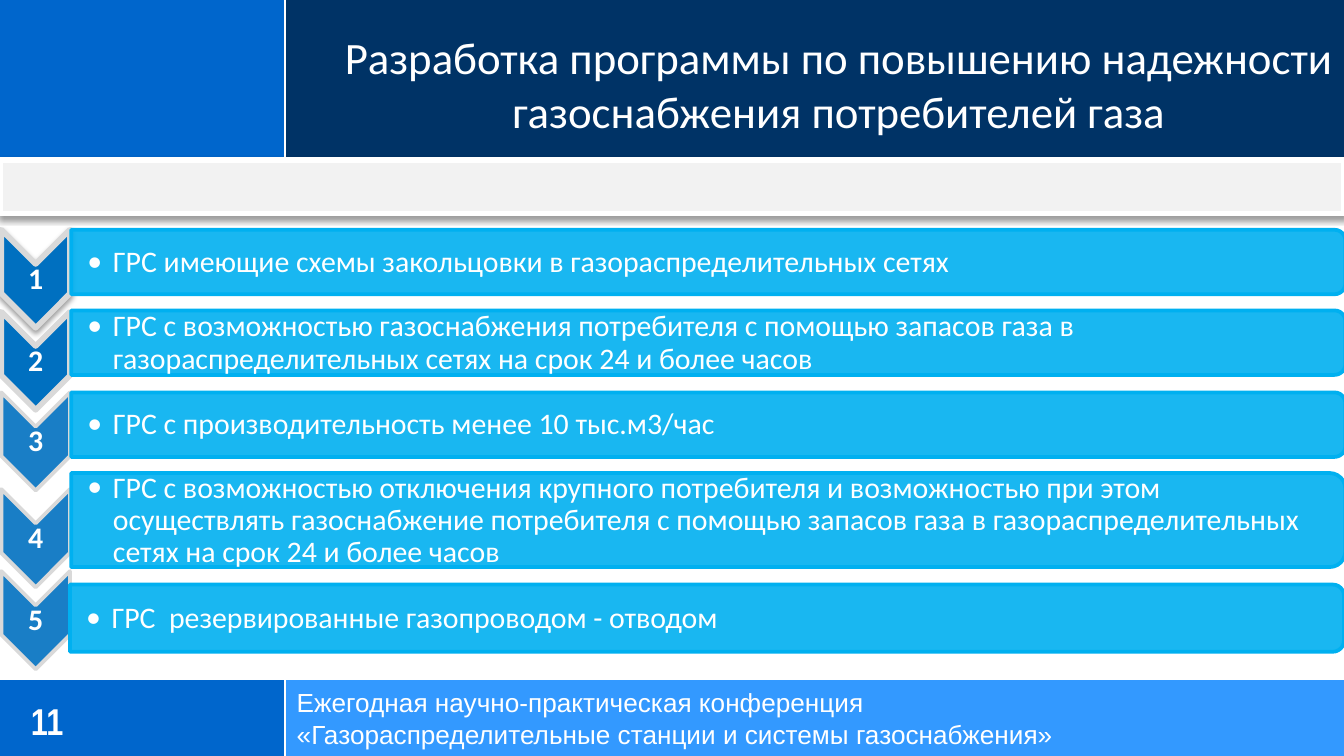
"""Build the slide on the gas supply reliability programme."""
from lxml import etree
from pptx import Presentation
from pptx import util as u
from pptx.dml.color import RGBColor
from pptx.enum import shapes as kinds, text as txt
from pptx.oxml.ns import qn

NAVY = RGBColor(0x00, 0x33, 0x66)
BLUE = RGBColor(0x00, 0x66, 0xCC)
LIGHT = RGBColor(0x33, 0x99, 0xFF)
ARROW = RGBColor(0x00, 0x70, 0xC0)
CYAN = RGBColor(0x00, 0xB0, 0xF0)
GREY = RGBColor(0xD9, 0xD9, 0xD9)
PALE = RGBColor(0xF2, 0xF2, 0xF2)
WHITE = RGBColor(0xFF, 0xFF, 0xFF)

TITLE = "Разработка программы по повышению надежности газоснабжения потребителей газа"
FOOTER = ("Ежегодная научно-практическая конференция\n"
          "«Газораспределительные станции и системы газоснабжения»")
NUMBER = "11"
PANELS = [
    (0, 5.06, 2.12, 0.59, BLUE),
    (2.12, 5.06, 7.88, 0.59, LIGHT),
    (2.12, 0, 7.88, 1.18, NAVY),
    (0, 0, 2.12, 1.18, BLUE),
]
RULES = [
    (2.12, 5.06, 2.12, 5.65),
    (2.12, 0, 2.12, 1.18),
    (0, 5.05, 10, 5.05),
    (0, 1.18, 10, 1.18),
]
# text, bar left, bar top, bar height, arrow top
ITEMS = [
    ("ГРС имеющие схемы закольцовки в газораспределительных сетях", 0.53, 1.71, 0.48, 1.71),
    ("ГРС с возможностью газоснабжения потребителя с помощью запасов газа в "
     "газораспределительных сетях на срок 24 и более часов", 0.53, 2.31, 0.48, 2.32),
    ("ГРС с производительность менее 10 тыс.м3/час", 0.53, 2.92, 0.48, 2.92),
    ("ГРС с возможностью отключения крупного потребителя и возможностью при этом "
     "осуществлять газоснабжение потребителя с помощью запасов газа в "
     "газораспределительных сетях на срок 24 и более часов", 0.53, 3.52, 0.7, 3.64),
    ("ГРС  резервированные газопроводом - отводом", 0.52, 4.35, 0.5, 4.25),
]

deck = Presentation()
deck.slide_width = u.Inches(10)
deck.slide_height = deck.slide_width * 9 // 16
slide = deck.slides.add_slide(deck.slide_layouts[5])


def shape(kind, left, top, wide, high, fill, line=None, width=0, alpha=100, turn=False):
    if turn:
        left, top = left + (wide - high) / 2, top + (high - wide) / 2
        wide, high = high, wide
    item = slide.shapes.add_shape(kind, *map(u.Inches, (left, top, wide, high)))
    item.rotation = 90 if turn else 0
    item.shadow.inherit = False
    item.fill.solid()
    item.fill.fore_color.rgb = fill
    if alpha < 100:
        color = item._element.spPr.find(qn("a:solidFill"))[0]
        etree.SubElement(color, qn("a:alpha"), val=str(alpha * 1000))
    if line is None:
        item.line.fill.background()
    else:
        item.line.color.rgb = line
        item.line.width = u.Pt(width)
    return item


def shade(item):
    effect = item._element.spPr.find(qn("a:effectLst"))
    outer = etree.SubElement(effect, qn("a:outerShdw"), blurRad=str(u.Pt(3.1)),
                             dist=str(u.Pt(1.6)), dir="5400000", rotWithShape="0")
    color = etree.SubElement(outer, qn("a:srgbClr"), val="000000")
    etree.SubElement(color, qn("a:alpha"), val="38000")


def style(frame, size, font, bold=False, align=None, space=None):
    for para in frame.paragraphs:
        para.alignment = align
        para.line_spacing = space
        for run in para.runs:
            run.font.size, run.font.name, run.font.bold = u.Pt(size), font, bold
            run.font.color.rgb = WHITE


def label(words, left, top, wide, high, pads=None):
    box = slide.shapes.add_textbox(*map(u.Inches, (left, top, wide, high)))
    frame = box.text_frame
    frame.word_wrap = True
    frame.text = words
    if pads:
        frame.vertical_anchor = txt.MSO_ANCHOR.MIDDLE
        (frame.margin_left, frame.margin_top,
         frame.margin_right, frame.margin_bottom) = map(u.Inches, pads)
    return frame


def bullet(para):
    props = para._p.get_or_add_pPr()
    props.set("marL", str(u.Inches(0.19)))
    props.set("indent", str(u.Inches(-0.19)))
    etree.SubElement(props, qn("a:buFont"), typeface="Calibri")
    etree.SubElement(props, qn("a:buChar"), char="•")


for *place, fill in PANELS:
    shape(kinds.MSO_SHAPE.RECTANGLE, *place, fill)
for ends in RULES:
    rule = slide.shapes.add_connector(kinds.MSO_CONNECTOR.STRAIGHT, *map(u.Inches, ends))
    rule.line.color.rgb = WHITE
    rule.line.width = u.Pt(1.25)
    etree.SubElement(rule._element.spPr, qn("a:effectLst"))

title = slide.shapes.title
slide.shapes._spTree.append(title._element)
title.left, title.top, title.width, title.height = map(u.Inches, (2.32, 0.17, 7.84, 0.91))
title.text_frame.text = TITLE
title.text_frame.auto_size = txt.MSO_AUTO_SIZE.NONE
title.text_frame.vertical_anchor = txt.MSO_ANCHOR.TOP
style(title.text_frame, 24, "Calibri", align=txt.PP_ALIGN.CENTER)

style(label(NUMBER, 0.23, 5.1, 1.62, 0.52, (0, 0, 0, 0)), 20, "Arial Narrow", True)
style(label(FOOTER, 2.11, 5.06, 7.87, 0.57), 14, "Arial")

for order, (words, left, top, high, tip) in enumerate(ITEMS, 1):
    solid = order < 3
    arrow = shape(kinds.MSO_SHAPE.CHEVRON, 0.01, tip, 0.51, 0.73, ARROW, GREY,
                  3 if solid else 2, 100 if solid else 90, True)
    if order == 1:
        shade(arrow)
    mark = label(str(order), 0.01, tip + 0.26, 0.51, 0.22, (0.01,) * 4)
    style(mark, 16, "Calibri", True, txt.PP_ALIGN.CENTER, 0.9)
    shape(kinds.MSO_SHAPE.ROUND_2_SAME_RECTANGLE, left, top, 9.48, high, CYAN, CYAN, 2, 90, True)
    frame = label(words, left, top + 0.03, 9.42, high - 0.05, (0.12, 0.01, 0.01, 0.01))
    bullet(frame.paragraphs[0])
    style(frame, 16, "Calibri", space=0.9)

shade(shape(kinds.MSO_SHAPE.RECTANGLE, 0, 1.19, 10, 0.4, PALE, WHITE, 3))

deck.save("out.pptx")
